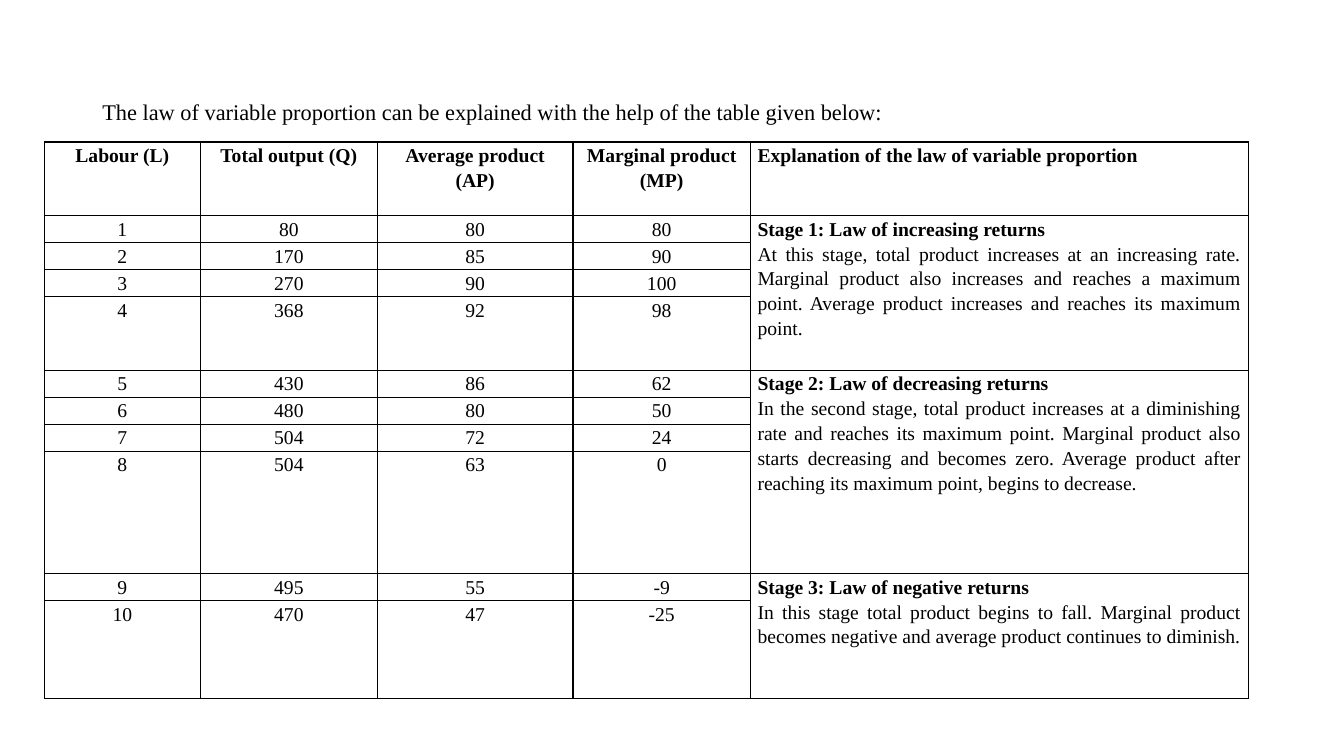
from lxml import etree
from pptx import Presentation
from pptx import util as u
from pptx.dml.color import RGBColor
from pptx.enum import text
from pptx.oxml.ns import qn

LEFT, CENTER, JUSTIFY = (text.PP_ALIGN.LEFT, text.PP_ALIGN.CENTER,
                         text.PP_ALIGN.JUSTIFY)


def rgb(value):
    return RGBColor.from_string(value)


class Deck:
    """Holds the text style and the current slide."""
    font = {"name": "Times New Roman", "size": u.Pt(14), "bold": False}
    color = "000000"

    def __init__(self, width, height):
        self.prs = Presentation()
        self.prs.slide_width, self.prs.slide_height = u.Cm(width), u.Cm(height)
        self.s = self.prs.slides.add_slide(self.prs.slide_layouts[6])

    def para(self, p, words, align=LEFT, spacing=1.15, **fmt):
        p.alignment, p.line_spacing = align, spacing
        r = p.add_run()
        r.text = words
        for name, value in {**self.font, **fmt}.items():
            setattr(r.font, name, value)
        r.font.color.rgb = rgb(self.color)

    def textbox(self, box, words, **fmt):
        tf = self.s.shapes.add_textbox(*map(u.Cm, box)).text_frame
        tf.word_wrap = True
        tf.vertical_anchor = text.MSO_ANCHOR.MIDDLE
        self.para(tf.paragraphs[0], words, **fmt)

    def border(self, cell):
        tcPr = cell._tc.get_or_add_tcPr()
        for i, side in enumerate(("a:lnL", "a:lnR", "a:lnT", "a:lnB")):
            ln = etree.Element(qn(side), w=str(u.Pt(1)))
            fill = etree.SubElement(ln, qn("a:solidFill"))
            etree.SubElement(fill, qn("a:srgbClr"), val=self.color)
            tcPr.insert(i, ln)

    def table(self, left, top, widths, heights):
        box = map(u.Cm, (left, top, sum(widths), sum(heights)))
        tbl = self.s.shapes.add_table(len(heights), len(widths), *box).table
        tbl.first_row = tbl.horz_banding = False
        for col, width in zip(tbl.columns, widths):
            col.width = u.Cm(width)
        for row, height in zip(tbl.rows, heights):
            row.height = u.Cm(height)
        for cell in tbl.iter_cells():
            cell.margin_left = cell.margin_right = u.Cm(0.18)
            cell.margin_top = cell.margin_bottom = 0
            cell.fill.background()
            self.border(cell)
        return tbl


HEADERS = ["Labour (L)", "Total output (Q)", "Average product (AP)",
           "Marginal product (MP)",
           "Explanation of the law of variable proportion"]
OUTPUT = [80, 170, 270, 368, 430, 480, 504, 504, 495, 470]
# Each stage: rows covered, height of its last row, heading, explanation
STAGES = [
    (4, 1.85, "Stage 1: Law of increasing returns",
     "At this stage, total product increases at an increasing rate. Marginal "
     "product also increases and reaches a maximum point. Average product "
     "increases and reaches its maximum point."),
    (4, 3.08, "Stage 2: Law of decreasing returns",
     "In the second stage, total product increases at a diminishing rate and "
     "reaches its maximum point. Marginal product also starts decreasing and "
     "becomes zero. Average product after reaching its maximum point, begins "
     "to decrease."),
    (2, 2.46, "Stage 3: Law of negative returns",
     "In this stage total product begins to fall. Marginal product becomes "
     "negative and average product continues to diminish."),
]


def main():
    deck = Deck(33.87, 19.05)

    # Title
    deck.textbox((2.33, 1.01, 29.21, 3.68),
                 "The law of variable proportion can be explained with the "
                 "help of the table given below:", spacing=0.9, size=u.Pt(16))

    # Table grid
    heights = [1.85]
    for count, last, *_ in STAGES:
        heights += [0.62] * (count - 1) + [last]
    tbl = deck.table(1.12, 3.58, [3.93, 4.46, 4.93, 4.47, 12.55], heights)

    # Header row
    for c, header in enumerate(HEADERS):
        deck.para(tbl.cell(0, c).text_frame.paragraphs[0], header,
                  align=CENTER if c < 4 else LEFT, bold=True)

    # Figures: average is output per worker, marginal is the change in output
    for labour, (before, total) in enumerate(zip([0] + OUTPUT, OUTPUT), 1):
        for c, n in enumerate((labour, total, total // labour, total - before)):
            deck.para(tbl.cell(labour, c).text_frame.paragraphs[0], str(n),
                      align=CENTER)

    # Explanations, merged over the rows of each stage
    row = 1
    for count, _, heading, explanation in STAGES:
        cell = tbl.cell(row, 4)
        cell.merge(tbl.cell(row + count - 1, 4))
        tf = cell.text_frame
        deck.para(tf.paragraphs[0], heading, bold=True)
        deck.para(tf.add_paragraph(), explanation, align=JUSTIFY)
        row += count

    deck.prs.save("out.pptx")


if __name__ == "__main__":
    main()
